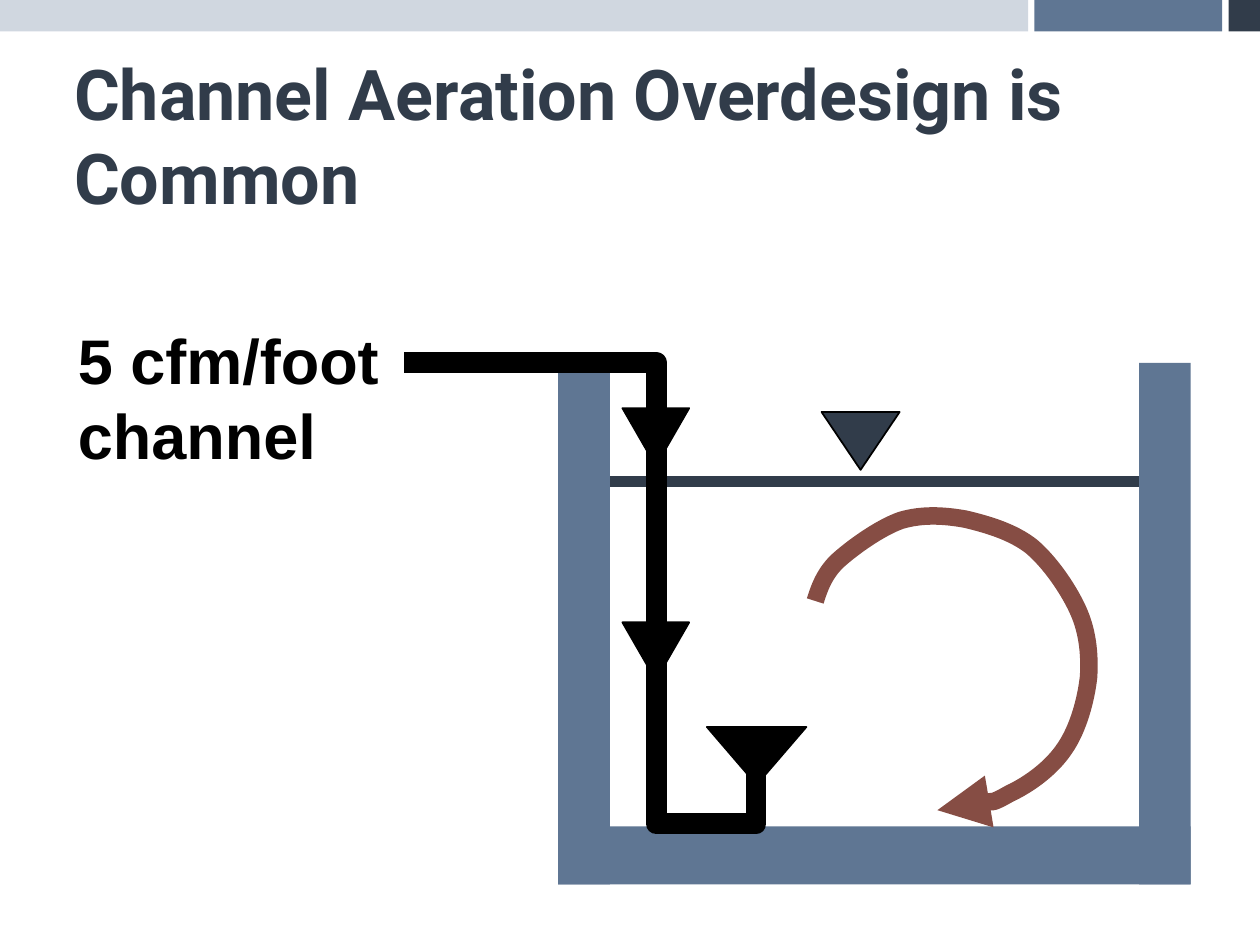
from collections import namedtuple

from lxml.etree import SubElement
from pptx import Presentation
from pptx.dml.color import RGBColor
from pptx.enum.shapes import MSO_CONNECTOR, MSO_SHAPE
from pptx.enum.text import MSO_ANCHOR
from pptx.oxml.ns import qn
from pptx.util import Inches, Pt

COLUMNS, ROWS = 100, 75
CELL = Inches(0.1)
COLORS = {
    "steel": "5F7693",
    "navy": "313C4A",
    "mist": "D0D7E0",
    "rust": "864D44",
    "black": "000000",
}
TITLE_FONT = {"name": "Roboto", "size": Pt(40), "bold": True}
LABEL_FONT = {"name": "Arial", "size": Pt(36), "bold": True}

Box = namedtuple("Box", "left top width height")


def cells(*counts):
    return [round(count * CELL) for count in counts]


def within(box, left, top, width, height):
    return cells(box.left + left, box.top + top, width, height)


def rgb(color):
    return RGBColor.from_string(COLORS[color])


def stroke(item, color, width):
    item.line.color.rgb = rgb(color)
    item.line.width = Pt(width)


def block(shapes, place, color, preset=MSO_SHAPE.RECTANGLE):
    part = shapes.add_shape(preset, *place)
    part.shadow.inherit = False
    part.fill.solid()
    part.fill.fore_color.rgb = rgb(color)
    part.line.fill.background()
    return part


def down_triangle(shapes, place, color):
    triangle = block(shapes, place, color, MSO_SHAPE.ISOSCELES_TRIANGLE)
    triangle._element.spPr.xfrm.set("flipV", "1")
    stroke(triangle, "black", 1)


def open_path(shapes, box, points, color, width):
    corners = [cells(box.left + x, box.top + y) for x, y in points]
    builder = shapes.build_freeform(*corners[0])
    builder.add_line_segments(corners[1:], close=False)
    outline = builder.convert_to_shape()
    outline.shadow.inherit = False
    outline.fill.background()
    stroke(outline, color, width)
    return outline


def bend(outline):
    path = outline._element.spPr.find(".//" + qn("a:path"))
    segments = path.findall(qn("a:lnTo"))
    for start in range(0, len(segments), 3):
        curve = SubElement(path, qn("a:cubicBezTo"))
        for segment in segments[start:start + 3]:
            curve.append(segment[0])
            path.remove(segment)


def header_band(shapes, box):
    for left, width, color in ((82.1, 14.9, "steel"), (97.5, 2.5, "navy"),
                               (0, 81.6, "mist")):
        block(shapes, within(box, left, 0, width, box.height), color)


def caption(shapes, box, words, font_values, color, anchor):
    frame = shapes.add_textbox(*cells(*box)).text_frame
    frame.word_wrap = True
    frame.vertical_anchor = anchor
    run = frame.paragraphs[0].add_run()
    run.text = words
    for attribute, value in font_values.items():
        setattr(run.font, attribute, value)
    run.font.color.rgb = rgb(color)


def basin(shapes, box):
    wall, floor, water_level = 4.1, 4.6, 9.4
    ends = cells(box.left + 0.8, box.top + water_level,
                 box.left + box.width - 1.5, box.top + water_level)
    water = shapes.add_connector(MSO_CONNECTOR.STRAIGHT, *ends)
    stroke(water, "navy", 6)
    SubElement(water._element.spPr, qn("a:effectLst"))
    tank = shapes.add_group_shape().shapes
    for left in (0, box.width - wall):
        block(tank, within(box, left, 0, wall, box.height), "steel")
    block(tank, within(box, 0, box.height - floor, box.width, floor), "steel")
    down_triangle(shapes, within(box, 20.9, 3.9, 6.2, 4.6), "navy")


def circulation(shapes, box):
    points = [
        (0, 6.9), (0.2, 6.3), (0.6, 4.8), (1.8, 3.7),
        (2.9, 2.7), (5.1, 1.1), (6.8, 0.5),
        (8.5, 0), (10.2, 0.1), (11.9, 0.4),
        (13.6, 0.8), (15.7, 1.4), (17.2, 2.6),
        (18.6, 3.8), (20, 5.8), (20.8, 7.5),
        (21.6, 9.2), (21.8, 11), (21.7, 12.9),
        (21.5, 14.7), (20.9, 17), (19.8, 18.6),
        (18.8, 20.1), (17.1, 21.4), (15.4, 22.2),
        (13.8, 23.1), (11, 23.3), (9.7, 23.5),
    ]
    swirl = open_path(shapes, box, points, "rust", 10)
    bend(swirl)
    SubElement(swirl.line._get_or_add_ln(), qn("a:tailEnd"), type="triangle")


def air_pipe(shapes, box):
    drop, outlet = 20, box.width
    down_triangle(shapes, within(box, 24, 28.9, 7.9, 4.6), "black")
    route = [(0, 0), (drop, 0), (drop, box.height),
             (outlet, box.height), (outlet, 32.2)]
    open_path(shapes, box, route, "black", 12)
    flow = shapes.add_group_shape().shapes
    for top in (20.6, 3.6):
        down_triangle(flow, within(box, drop - 2.7, top, 5.3, 4.6), "black")


def main():
    deck = Presentation()
    deck.slide_width, deck.slide_height = cells(COLUMNS, ROWS)
    shapes = deck.slides.add_slide(deck.slide_layouts[6]).shapes
    header_band(shapes, Box(0, 0, COLUMNS, 2.5))
    caption(shapes, Box(4.9, 6.8, 89.8, 7.8),
            "Channel Aeration Overdesign is Common",
            TITLE_FONT, "navy", MSO_ANCHOR.MIDDLE)
    basin(shapes, Box(44.3, 28.8, 50.2, 41.4))
    circulation(shapes, Box(64.7, 40.8, 21.9, 23.5))
    air_pipe(shapes, Box(32.1, 28.8, 27.9, 36.6))
    caption(shapes, Box(5.2, 25, 34.2, 13), "5 cfm/foot channel",
            LABEL_FONT, "black", MSO_ANCHOR.TOP)
    deck.save("out.pptx")


if __name__ == "__main__":
    main()
